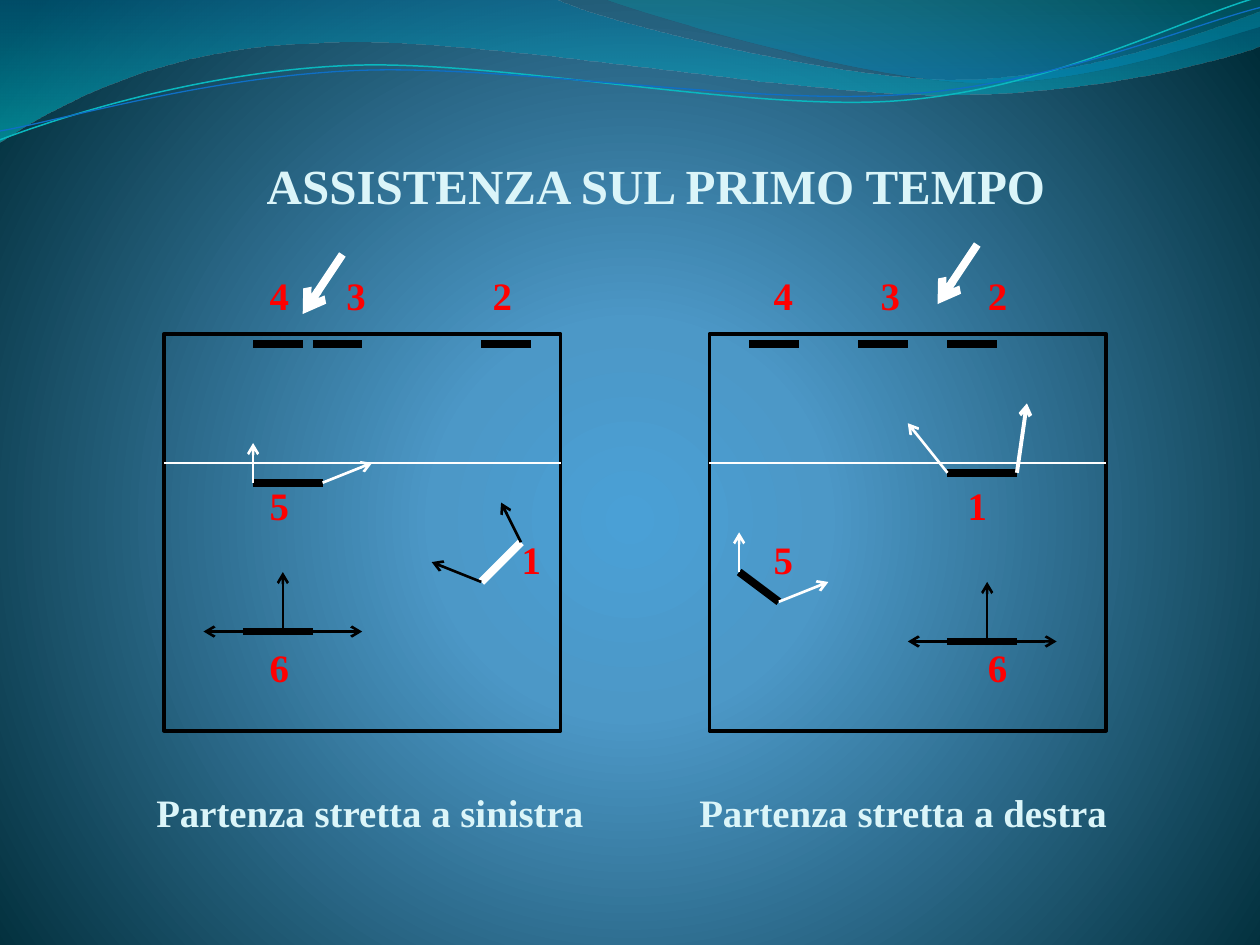
from lxml import etree
from pptx import Presentation
from pptx import util as u
from pptx.dml.color import RGBColor
from pptx.enum import shapes, text
from pptx.oxml import parse_xml
from pptx.oxml.ns import nsdecls, qn

COLOURS = {
    "black": "000000", "white": "FFFFFF", "red": "FF0000", "pale": "DBF5F9",
    "centre": "4AA0D6", "middle": "4C98C7", "edge": "002C38",
    "sea": "0074A1", "aqua": "00C6CF", "teal": "00A1A9", "azure": "008BBF",
    "cyan": "0AB8BF", "blue": "0F6FC6",
}


def blend(owner, stops, direction):
    gradient = owner.xpath(".//a:gradFill")[0]
    for child in list(gradient):
        gradient.remove(child)
    marks = "".join(
        f'<a:gs pos="{place * 1000}"><a:srgbClr val="{COLOURS[name]}">'
        f'<a:alpha val="{opacity * 1000}"/></a:srgbClr></a:gs>'
        for place, name, opacity in stops)
    gradient.append(parse_xml(f'<a:gsLst {nsdecls("a")}>{marks}</a:gsLst>'))
    gradient.append(parse_xml(direction))


def write(box, place, words, colour, size, align, anchor, top_inset=0):
    for name, value in zip(("left", "top", "width", "height"), place):
        setattr(box, name, u.Inches(value))
    frame = {"margin_left": 0, "margin_right": 0, "margin_bottom": 0,
             "margin_top": u.Inches(top_inset), "vertical_anchor": anchor,
             "word_wrap": True, "auto_size": text.MSO_AUTO_SIZE.NONE}
    for name, value in frame.items():
        setattr(box.text_frame, name, value)
    para = box.text_frame.paragraphs[0]
    layout = {"alignment": align, "space_before": u.Pt(0), "line_spacing": 1.0}
    for name, value in layout.items():
        setattr(para, name, value)
    span = para.add_run()
    span.text = words
    values = {"name": "Times New Roman", "size": u.Pt(size), "bold": True}
    for name, value in values.items():
        setattr(span.font, name, value)
    span.font.color.rgb = RGBColor.from_string(COLOURS[colour])


deck = Presentation()
deck.slide_width, deck.slide_height = u.Inches(10), u.Inches(7.5)
page = deck.slides.add_slide(deck.slide_layouts[1])

page.background.fill.gradient()
blend(page.background._cSld, [(0, "centre", 100), (25, "middle", 100), (100, "edge", 100)],
      f'<a:path {nsdecls("a")} path="circle">'
      '<a:fillToRect l="10000" t="110000" r="10000" b="100000"/></a:path>')

DOWN = f'<a:lin {nsdecls("a")} ang="5400000" scaled="1"/>'
waves = [
    ([(0, 0), (4.4, -0.01), (4.76, 0.17, 6.64, 0.63, 7.58, 0.63),
      (8.53, 0.63, 9.58, 0.26, 10, 0.09), (10.01, 0.36),
      (9.83, 0.44, 8.7, 0.76, 7.46, 0.75), (6.22, 0.75, 3.82, 0.28, 2.57, 0.34),
      (1.29, 0.36, 0.46, 0.83, -0.01, 1.13)],
     [(0, "sea", 45), (100, "aqua", 55)], None),
    ([(4.79, -0.01), (5.09, 0.11, 6.82, 0.62, 7.69, 0.65),
      (8.56, 0.69, 9.61, 0.32, 10, 0.21), (10, 0)],
     [(0, "teal", 30), (80, "azure", 45)], None),
    ([(0, 1.11), (0.48, 0.93, 1.58, 0.57, 2.77, 0.52),
      (3.95, 0.47, 5.93, 0.89, 7.13, 0.8), (8.33, 0.71, 9.38, 0.15, 9.98, -0.02)],
     None, ("cyan", 0.85)),
    ([(0, 1.04), (0.47, 0.96, 1.64, 0.61, 2.83, 0.56),
      (4.03, 0.51, 5.97, 0.84, 7.17, 0.75), (8.36, 0.67, 9.41, 0.21, 10, 0.06)],
     None, ("blue", 0.75)),
]
for order, (pieces, stops, stroke) in enumerate(waves):
    points = [(u.Inches(piece[i]), u.Inches(piece[i + 1]))
              for piece in pieces for i in range(0, len(piece), 2)]
    builder = page.shapes.build_freeform(*points[0])
    builder.add_line_segments(points[1:], close=stops is not None)
    wave = builder.convert_to_shape()
    segments = iter(wave._element.xpath(".//a:lnTo"))
    for piece in pieces[1:]:
        group = [next(segments) for _ in range(len(piece) // 2)]
        if len(group) == 3:
            curve = etree.Element(qn("a:cubicBezTo"))
            group[0].addprevious(curve)
            for segment in group:
                curve.append(segment[0])
                segment.getparent().remove(segment)
    wave.shadow.inherit = False
    if stops:
        wave.fill.gradient()
        blend(wave._element, stops, DOWN)
        wave.line.fill.background()
    else:
        wave.fill.background()
        wave.line.color.rgb = RGBColor.from_string(COLOURS[stroke[0]])
        wave.line.width = u.Pt(stroke[1])
    page.shapes._spTree.insert(2 + order, wave._element)

title, body = page.placeholders
write(title, (0.91, 0.77, 8.59, 0.93), "ASSISTENZA SUL PRIMO TEMPO", "pale", 28,
      text.PP_ALIGN.CENTER, text.MSO_ANCHOR.BOTTOM, 0.05)

rows = [
    (6.26, "pale", 3.6, [(1.24, "Partenza stretta a sinistra"), (5.55, "Partenza stretta a destra")]),
    (2.16, "red", 0.3, [(2.14, "4"), (2.75, "3"), (3.91, "2"), (6.14, "4"), (6.99, "3"), (7.84, "2")]),
    (3.82, "red", 0.3, [(2.14, "5"), (7.68, "1")]),
    (4.25, "red", 0.3, [(4.14, "1"), (6.14, "5")]),
    (5.11, "red", 0.3, [(2.14, "6"), (7.84, "6")]),
]
box = body
for top, colour, width, entries in rows:
    for left, words in entries:
        box = box or page.shapes.add_textbox(0, 0, 0, 0)
        write(box, (left, top, width, 0.4), words, colour, 22.2,
              text.PP_ALIGN.LEFT, text.MSO_ANCHOR.TOP)
        box = None
settings = body.text_frame.paragraphs[0]._p.get_or_add_pPr()
settings.set("marL", "0")
settings.set("indent", "0")
etree.SubElement(settings, qn("a:buNone"))

COURT, COURT_TOP = 3.15, 2.65
CELL = COURT / 40
STYLES = {
    "bar": ("black", 4.5, False), "white bar": ("white", 4.5, False),
    "net": ("white", 1.5, False), "move": ("black", 1.5, True),
    "white move": ("white", 1.5, True), "strong move": ("white", 2.25, True),
    "attack": ("white", 4.5, True),
}
courts = [
    (1.3, {
        "net": [(0, 13, 40, 13)],
        "bar": [(9, 1, 14, 1), (15, 1, 20, 1), (32, 1, 37, 1), (8, 30, 15, 30), (9, 15, 16, 15)],
        "white bar": [(32, 25, 36, 21)],
        "white move": [(9, 15, 9, 11), (16, 15, 21, 13)],
        "move": [(15, 30, 20, 30), (12, 30, 12, 24), (8, 30, 4, 30),
                 (36, 21, 34, 17), (32, 25, 27, 23)],
        "attack": [(18, -8, 14, -2)],
    }),
    (5.63, {
        "net": [(0, 13, 40, 13)],
        "bar": [(4, 1, 9, 1), (15, 1, 20, 1), (24, 1, 29, 1), (24, 14, 31, 14),
                (24, 31, 31, 31), (3, 24, 7, 27)],
        "white move": [(3, 24, 3, 20), (7, 27, 12, 25), (24, 14, 20, 9)],
        "strong move": [(31, 14, 32, 7)],
        "move": [(28, 31, 28, 25), (30, 31, 35, 31), (24, 31, 20, 31)],
        "attack": [(27, -9, 23, -3)],
    }),
]
for left, marks in courts:
    court = page.shapes.add_shape(shapes.MSO_SHAPE.RECTANGLE, u.Inches(left),
                                  u.Inches(COURT_TOP), u.Inches(COURT), u.Inches(COURT))
    court.shadow.inherit = False
    court.fill.background()
    court.line.color.rgb = RGBColor.from_string(COLOURS["black"])
    court.line.width = u.Pt(2)
    for style, segments in marks.items():
        colour, width, pointed = STYLES[style]
        for x1, y1, x2, y2 in segments:
            ends = (left + x1 * CELL, COURT_TOP + y1 * CELL,
                    left + x2 * CELL, COURT_TOP + y2 * CELL)
            line = page.shapes.add_connector(shapes.MSO_CONNECTOR.STRAIGHT, *map(u.Inches, ends))
            line.line.color.rgb = RGBColor.from_string(COLOURS[colour])
            line.line.width = u.Pt(width)
            if pointed:
                etree.SubElement(line._element.xpath(".//a:ln")[0], qn("a:tailEnd"), type="arrow")
            etree.SubElement(line._element.spPr, qn("a:effectLst"))

deck.save("out.pptx")
